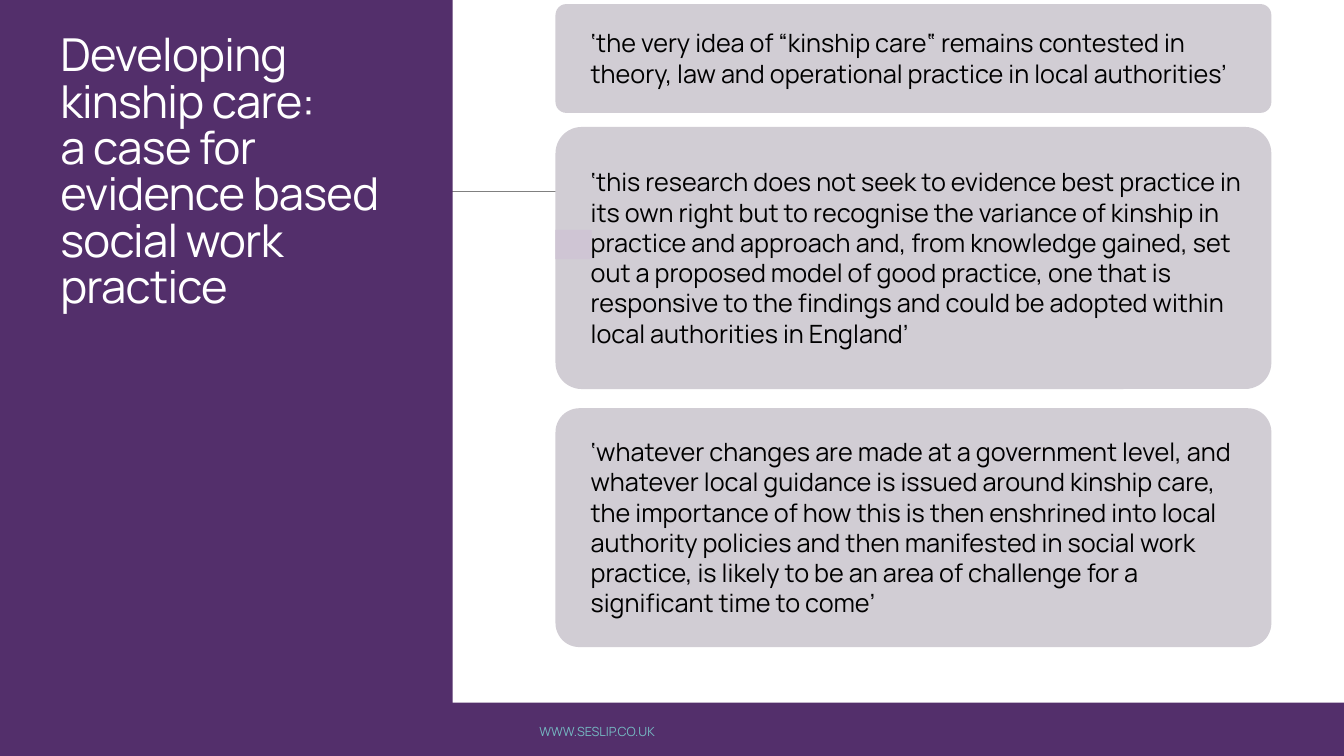
from lxml import etree
from pptx import Presentation
from pptx.dml.color import RGBColor
from pptx.enum.shapes import MSO_CONNECTOR, MSO_SHAPE
from pptx.enum.text import MSO_ANCHOR
from pptx.oxml.ns import qn
from pptx.util import Inches, Pt

RECTANGLE = MSO_SHAPE.RECTANGLE
ROUNDED = MSO_SHAPE.ROUNDED_RECTANGLE
STRAIGHT = MSO_CONNECTOR.STRAIGHT
TOP, MIDDLE, BOTTOM = MSO_ANCHOR.TOP, MSO_ANCHOR.MIDDLE, MSO_ANCHOR.BOTTOM

PURPLE = RGBColor(0x53, 0x2F, 0x6B)
CARD_GREY = RGBColor(0xD1, 0xCD, 0xD4)
MARKER_LILAC = RGBColor(0xCF, 0xC5, 0xD4)
RULE_GREY = RGBColor(0x80, 0x80, 0x80)
TEAL = RGBColor(0x75, 0xB8, 0xC2)
WHITE = RGBColor(0xFF, 0xFF, 0xFF)
BLACK = RGBColor(0, 0, 0)
FONT = "Manrope"

TITLE = [
    "Developing kinship care: ",
    "a case for evidence based social work practice",
]
FOOTER = "WWW.SESLIP.CO.UK"
QUOTES = [
    {"top": 0.04, "height": 1.08, "text_width": 6.75, "lines": 2,
     "text": "‘the very idea of “kinship care‟ remains contested in theory, law and "
             "operational practice in local authorities’"},
    {"top": 1.26, "height": 2.6, "text_width": 6.75, "lines": 6,
     "text": "‘this research does not seek to evidence best practice in its own right "
             "but to recognise the variance of kinship in practice and approach and, "
             "from knowledge gained, set out a proposed model of good practice, one "
             "that is responsive to the findings and could be adopted within local "
             "authorities in England’"},
    {"top": 4.05, "height": 2.37, "text_width": 6.59, "lines": 6,
     "text": "‘whatever changes are made at a government level, and whatever local "
             "guidance is issued around kinship care, the importance of how this is "
             "then enshrined into local authority policies and then manifested in "
             "social work practice, is likely to be an area of challenge for a "
             "significant time to come’"},
]

WIDTH, HEIGHT = 13.33, 7.5
PANEL_WIDTH = 4.49
BAND_TOP = 6.97
CARD_LEFT, CARD_WIDTH = 5.51, 7.1
QUOTE_LEFT = CARD_LEFT + 0.25
LINE_HEIGHT, INSETS = 0.3, 0.11
RULE_LEFT, RULE_RIGHT, RULE_TOP = 1.31, 12.21, 1.9


def add_block(page, kind, left, top, width, height, color):
    block = page.shapes.add_shape(
        kind, Inches(left), Inches(top), Inches(width), Inches(height))
    block.shadow.inherit = False
    block.fill.solid()
    block.fill.fore_color.rgb = color
    block.line.fill.background()
    return block


def add_text(page, left, top, width, height, lines, size, color, anchor=TOP):
    box = page.shapes.add_textbox(
        Inches(left), Inches(top), Inches(width), Inches(height))
    frame = box.text_frame
    frame.word_wrap = True
    frame.vertical_anchor = anchor
    para = frame.paragraphs[0]
    for index, line in enumerate(lines):
        if index:
            para.add_line_break()
        span = para.add_run()
        span.text = line
        span.font.name = FONT
        span.font.size = Pt(size)
        span.font.color.rgb = color
    return para


def add_rule(page):
    rule = page.shapes.add_connector(
        STRAIGHT, Inches(RULE_LEFT), Inches(RULE_TOP),
        Inches(RULE_RIGHT), Inches(RULE_TOP))
    rule.line.color.rgb = RULE_GREY
    rule.line.width = Pt(0.5)
    etree.SubElement(rule._element.spPr, qn("a:effectLst"))


def add_title(page):
    para = add_text(page, 0.5, 0.65, 3.5, 2.5, TITLE, 32.4, WHITE, BOTTOM)
    para.line_spacing = 0.85
    for span in para.runs:
        span.font._element.set("spc", "-50")


def add_quote(page, quote):
    card = add_block(page, ROUNDED, CARD_LEFT, quote["top"],
                     CARD_WIDTH, quote["height"], CARD_GREY)
    card.adjustments[0] = 0.1
    text_height = quote["lines"] * LINE_HEIGHT + INSETS
    text_top = quote["top"] + (quote["height"] - text_height) / 2
    add_text(page, QUOTE_LEFT, text_top, quote["text_width"], text_height,
             [quote["text"]], 18, BLACK)


def main():
    deck = Presentation()
    deck.slide_width, deck.slide_height = Inches(WIDTH), Inches(HEIGHT)
    page = deck.slides.add_slide(deck.slide_layouts[6])
    add_block(page, RECTANGLE, 0, BAND_TOP, WIDTH, HEIGHT - BAND_TOP, PURPLE)
    add_rule(page)
    add_block(page, RECTANGLE, 0, 0, PANEL_WIDTH, HEIGHT, PURPLE)
    add_title(page)
    footer = add_text(page, 5.25, 7.06, 5.08, 0.4, [FOOTER], 9, TEAL, MIDDLE)
    footer.space_after = Pt(6)
    for quote in QUOTES:
        add_quote(page, quote)
    add_block(page, RECTANGLE, CARD_LEFT, 2.28, 0.36, 0.29, MARKER_LILAC)
    deck.save("out.pptx")


if __name__ == "__main__":
    main()
